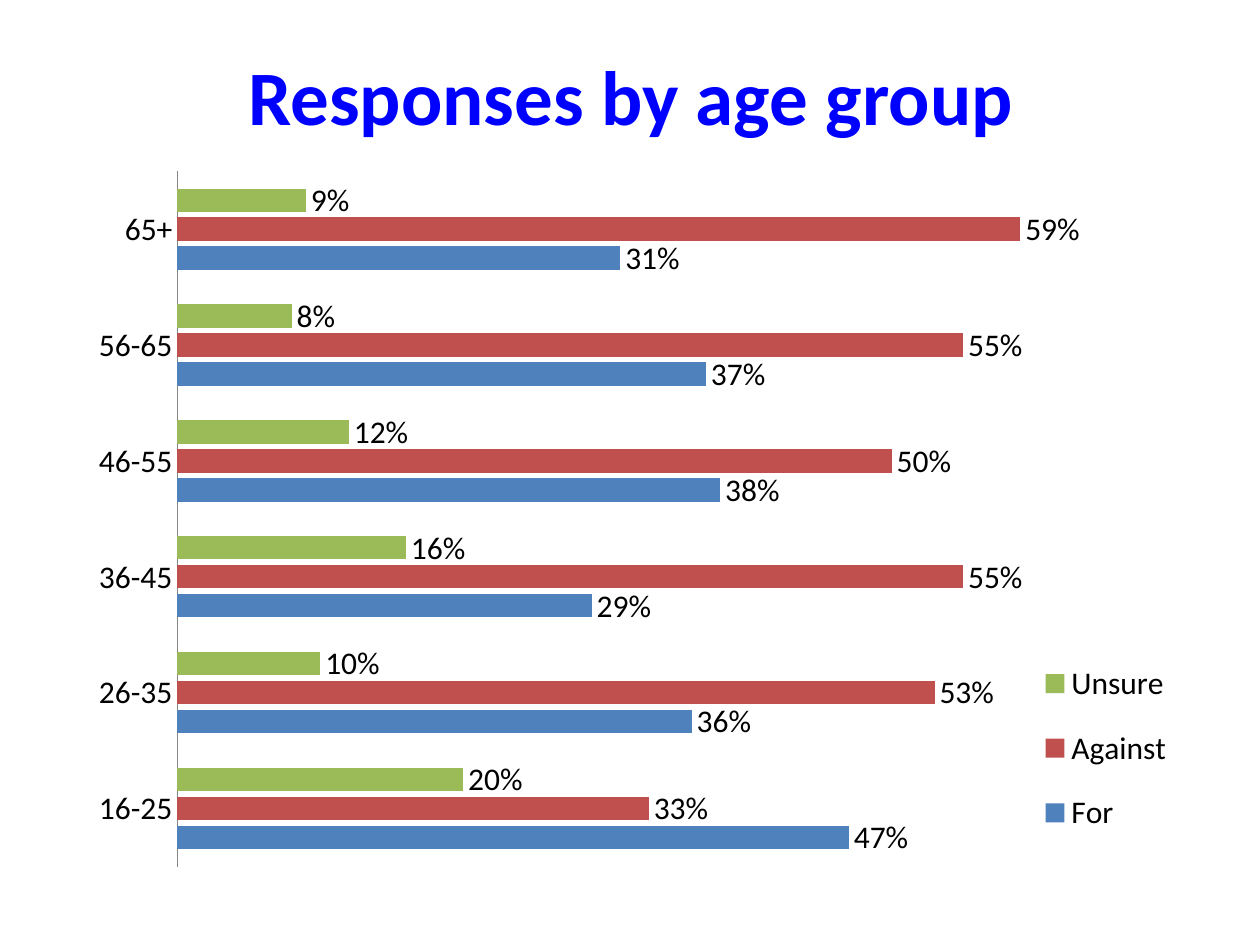
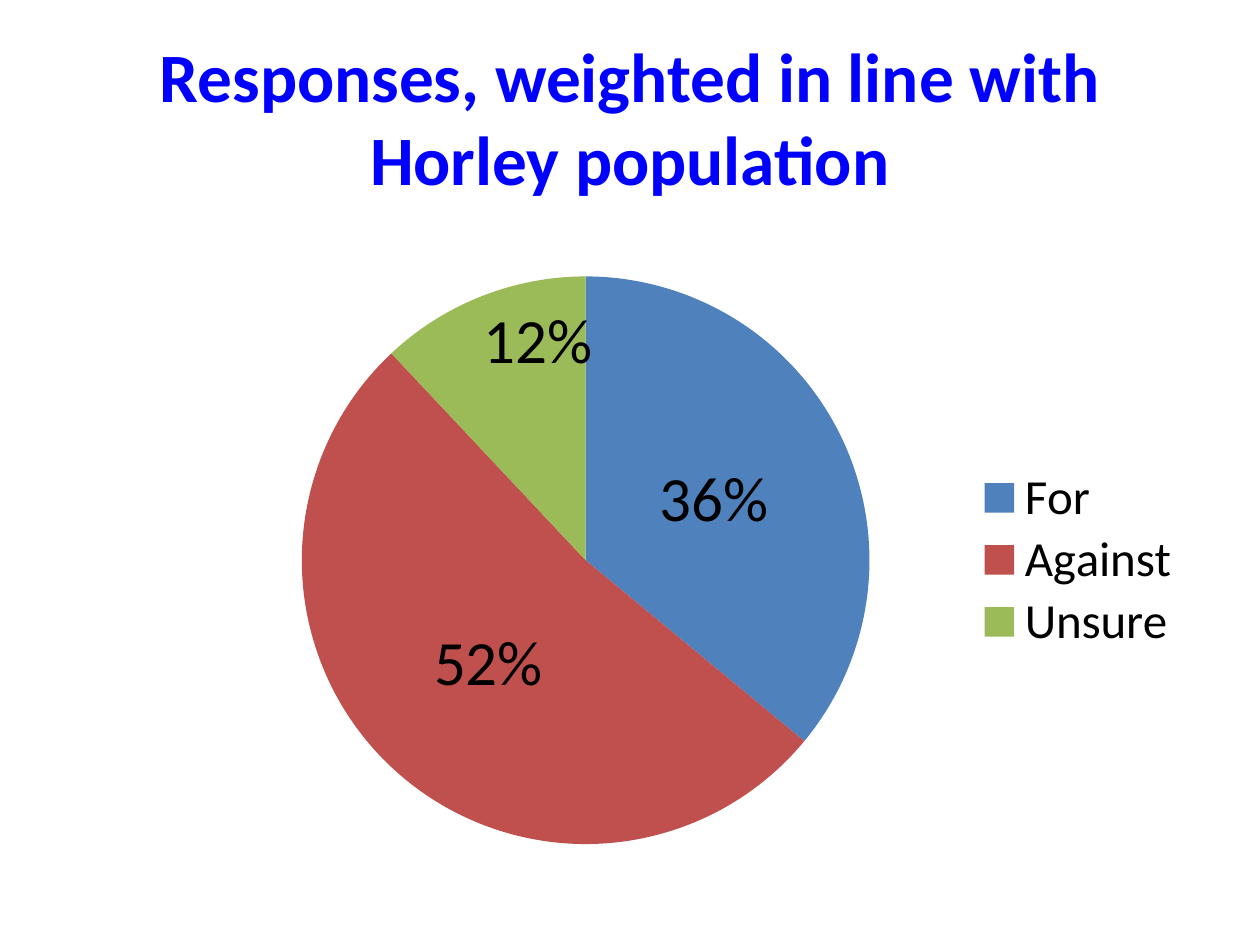
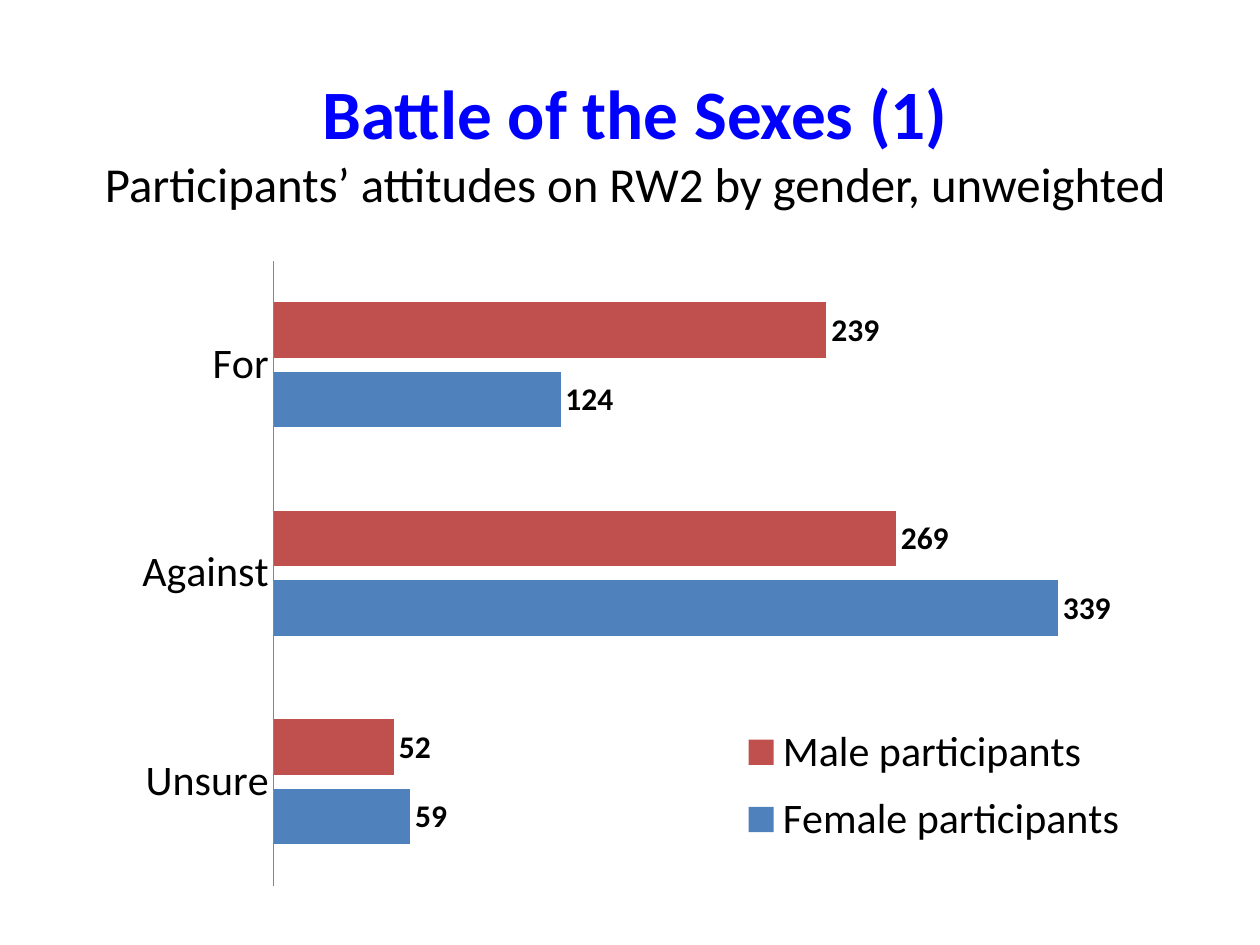
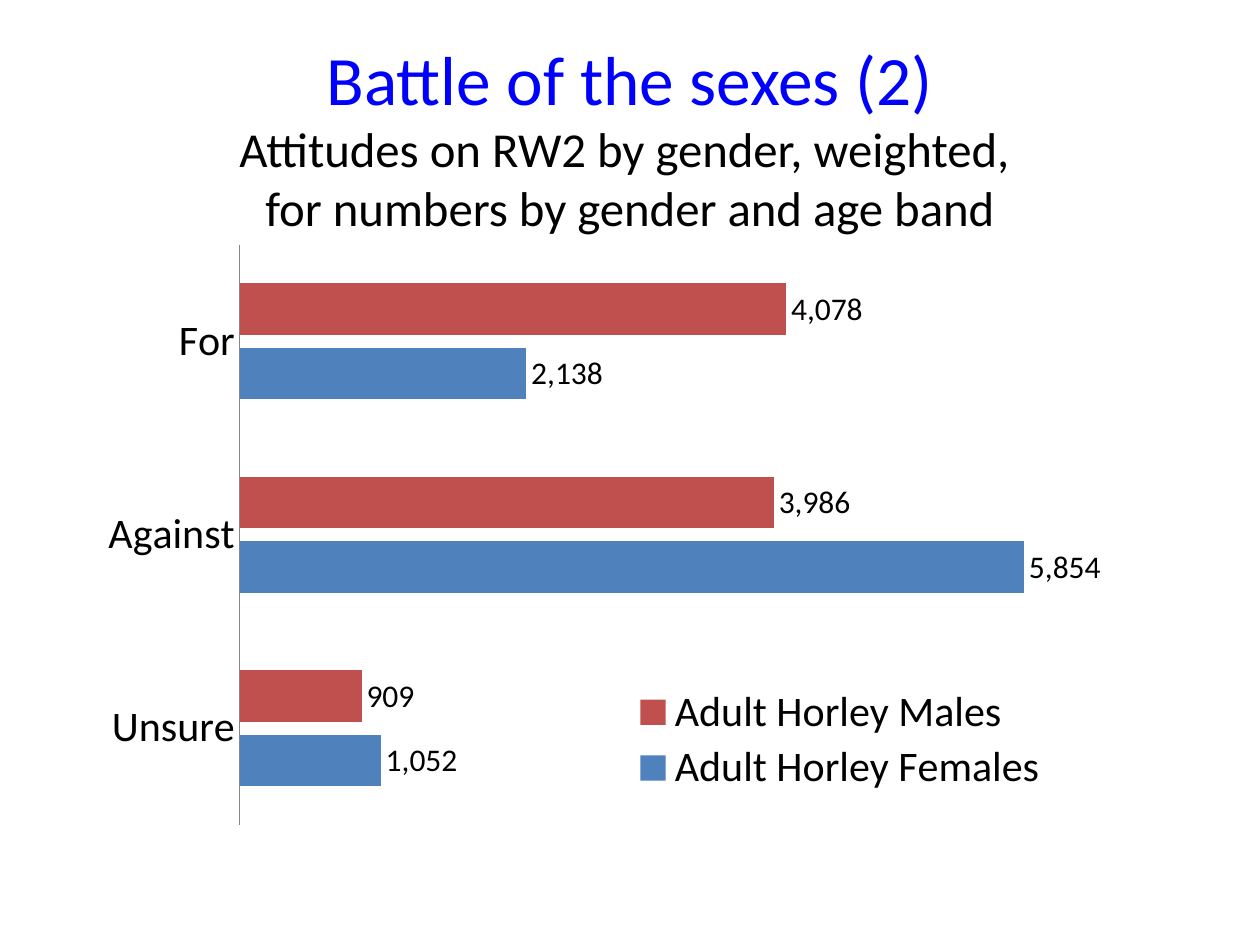
from dataclasses import dataclass

from lxml import etree
from pptx import Presentation
from pptx.chart.data import CategoryChartData
from pptx.dml.color import RGBColor
from pptx.enum.chart import (XL_CHART_TYPE, XL_LABEL_POSITION,
                             XL_LEGEND_POSITION, XL_TICK_MARK)
from pptx.enum.text import MSO_ANCHOR, PP_ALIGN
from pptx.oxml.ns import qn
from pptx.util import Pt

BAR, PIE = XL_CHART_TYPE.BAR_CLUSTERED, XL_CHART_TYPE.PIE
END, CENTER = XL_LABEL_POSITION.OUTSIDE_END, XL_LABEL_POSITION.CENTER
EDGE = XL_LABEL_POSITION.INSIDE_END
TOP, RIGHT = XL_LEGEND_POSITION.TOP, XL_LEGEND_POSITION.RIGHT
NONE = XL_TICK_MARK.NONE


@dataclass(frozen=True)
class Theme:
    font: str = "Calibri"
    title: RGBColor = RGBColor(0x00, 0x00, 0xFF)
    text: RGBColor = RGBColor(0x00, 0x00, 0x00)
    axis: RGBColor = RGBColor(0x86, 0x86, 0x86)
    blue: RGBColor = RGBColor(0x4F, 0x81, 0xBD)
    red: RGBColor = RGBColor(0xC0, 0x50, 0x4D)
    green: RGBColor = RGBColor(0x9B, 0xBB, 0x59)
    large: float = 44
    head: float = 39.6
    sub: float = 27.9
    share: float = 36
    key: float = 28
    mid: float = 24
    base: float = 18

    @property
    def fills(self):
        return self.blue, self.red, self.green


THEME = Theme()


def style(font, size, color=THEME.text, bold=False):
    font.name, font.size, font.bold = THEME.font, Pt(size), bold
    font.color.rgb = color


def paint(part, color):
    part.format.fill.solid()
    part.format.fill.fore_color.rgb = color


def add_title(slide, box, head, subs=(), size=THEME.head, bold=True):
    """Centre a blue heading over smaller black lines."""
    frame = slide.shapes.add_textbox(*map(Pt, box)).text_frame
    frame.word_wrap = True
    frame.vertical_anchor = MSO_ANCHOR.MIDDLE
    para = frame.paragraphs[0]
    para.alignment = PP_ALIGN.CENTER
    run = para.add_run()
    run.text = head
    style(run.font, size, THEME.title, bold)
    for line in subs:
        para.add_line_break()
        run = para.add_run()
        run.text = line
        style(run.font, THEME.sub)


def set_layout(parent, index, box, area, inner=False):
    """Fix a chart part at area, given in points within the chart's box."""
    for old in parent.findall(qn("c:layout")):
        parent.remove(old)
    layout = etree.Element(qn("c:layout"))
    manual = etree.SubElement(layout, qn("c:manualLayout"))
    shares = [part / whole for part, whole in zip(area, box[2:] * 2)]
    rules = [("layoutTarget", "inner")] if inner else []
    rules += [("xMode", "edge"), ("yMode", "edge"), *zip("xywh", shares)]
    for name, value in rules:
        etree.SubElement(manual, qn("c:" + name)).set("val", str(value))
    parent.insert(index, layout)


def add_chart(slide, box, kind, cats, rows, area, key, place, size):
    """Add a chart; area and key are the boxes of its plot and legend."""
    data = CategoryChartData()
    data.categories = cats
    for name, values in rows:
        data.add_series(name, values)
    chart = slide.shapes.add_chart(kind, *map(Pt, box), data).chart
    chart.has_title = False
    style(chart.font, THEME.base)
    set_layout(chart._chartSpace.chart.plotArea, 0, box, area, inner=True)
    chart.has_legend = True
    legend = chart.legend
    legend.position = place
    legend.include_in_layout = False
    style(legend.font, size)
    set_layout(legend._element, 1, box, key)
    return chart


def add_bars(slide, box, cats, rows, area, key, top, form="General",
             size=THEME.mid, bold=False):
    """Add grouped bars on a hidden axis that ends at top."""
    chart = add_chart(slide, box, BAR, cats, rows, area, key, TOP, size)

    scale = chart.value_axis
    scale.minimum_scale, scale.maximum_scale = 0, top
    scale.has_major_gridlines = False
    scale.visible = False

    axis = chart.category_axis
    axis.major_tick_mark = axis.minor_tick_mark = NONE
    axis.format.line.color.rgb = THEME.axis
    style(axis.tick_labels.font, size)

    plot = chart.plots[0]
    plot.gap_width, plot.overlap = 150, -25
    plot.vary_by_categories = False
    for series, color in zip(plot.series, THEME.fills):
        paint(series, color)
        labels = series.data_labels
        labels.show_value = True
        labels.position = END
        labels.number_format = form
        labels.number_format_is_linked = False
        style(labels.font, THEME.base, bold=bold)


def add_pie(slide, box, cats, values, area, key):
    chart = add_chart(slide, box, PIE, cats, [("Series 1", values)],
                      area, key, RIGHT, THEME.key)
    plot = chart.plots[0]
    plot.vary_by_categories = True
    series = plot.series[0]
    for index, color in enumerate(THEME.fills):
        paint(series.points[index], color)
    labels = series.data_labels
    labels.show_value, labels.show_percentage = False, True
    labels.number_format, labels.number_format_is_linked = "0%", False
    labels.position = CENTER
    style(labels.font, THEME.share)

    # The narrow slice needs its label near the rim
    label = series.points[len(values) - 1].data_label
    style(label.font, THEME.share)
    label.position = EDGE
    node = labels._element.find(qn("c:dLbl"))
    node.find(qn("c:showVal")).set("val", "0")
    node.find(qn("c:showPercent")).set("val", "1")


def main():
    deck = Presentation()
    deck.slide_width, deck.slide_height = Pt(720), Pt(540)
    ages, whole, first, second = [
        deck.slides.add_slide(deck.slide_layouts[6]) for _ in range(4)]
    views = ["For", "Against", "Unsure"]
    body = (36, 126, 648, 356.4)

    add_title(ages, (36.7, 9.2, 648, 90), "Responses by age group",
              size=THEME.large)
    add_bars(ages, (36, 88.6, 648, 419.8),
             ["16-25", "26-35", "36-45", "46-55", "56-65", "65+"],
             [("For", (0.47, 0.36, 0.29, 0.38, 0.37, 0.31)),
              ("Against", (0.33, 0.53, 0.55, 0.5, 0.55, 0.59)),
              ("Unsure", (0.2, 0.1, 0.16, 0.12, 0.08, 0.09))],
             (65.4, 9.2, 571.5, 397.5), (554, 276, 84, 126),
             0.7, "0%", THEME.base)

    add_title(whole, (36, 21.6, 648, 90),
              "Responses, weighted in line with Horley population")
    add_pie(whole, body, views, (36, 52, 12),
            (115.3, 32, 366.8, 324.4), (520, 140, 120, 108))

    add_title(first, (20, 21.6, 686, 118), "Battle of the Sexes (1)",
              ["Participants’ attitudes on RW2 by gender, unweighted"])
    add_bars(first, (48.2, 128.2, 648, 390.2), views[::-1],
             [("Female participants", (59, 339, 124)),
              ("Male participants", (52, 269, 239))],
             (108.2, 20.7, 528.8, 357.4), (372, 278, 227, 86),
             400, bold=True)

    add_title(second, (36, 21.6, 648, 112.3), "Battle of the sexes (2)",
              ["Attitudes on RW2 by gender, weighted, ",
               "for numbers by gender and age band"], bold=False)
    add_bars(second, body, views[::-1],
             [("Adult Horley Females", (1052, 5854, 2138)),
              ("Adult Horley Males", (909, 3986, 4078))],
             (101.1, 13.9, 535.9, 331.5), (321, 264, 246, 66),
             7000, "#,##0")

    deck.save("out.pptx")


if __name__ == "__main__":
    main()
